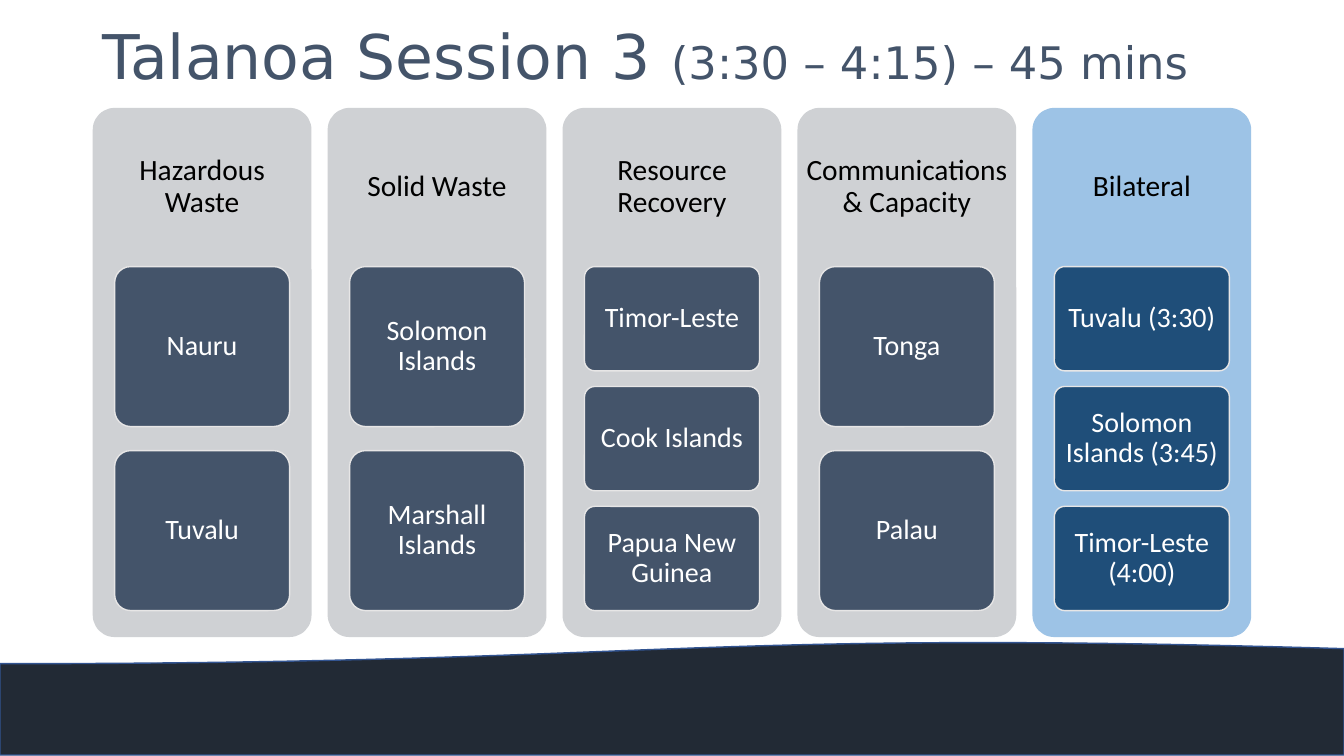
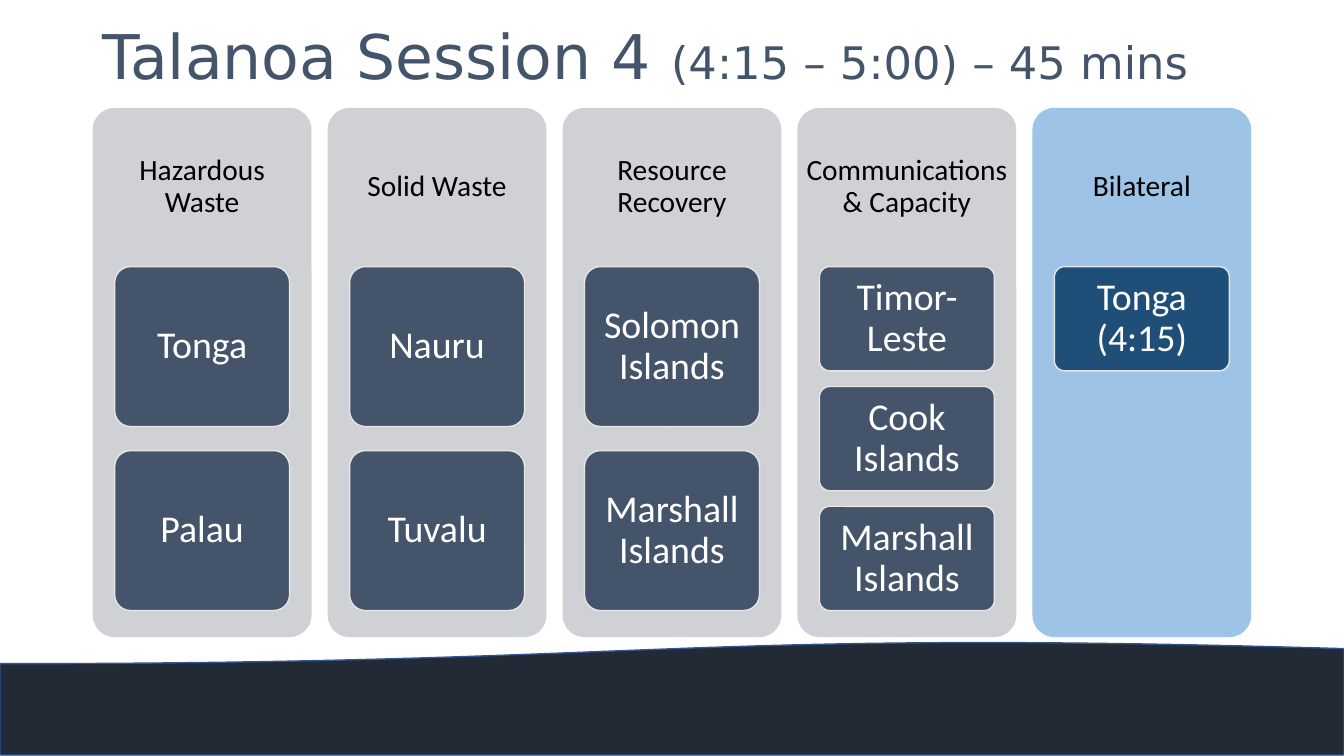
from pptx import Presentation
from pptx.dml.color import RGBColor
from pptx.enum.shapes import MSO_SHAPE as SHAPE
from pptx.enum.text import MSO_ANCHOR as ANCHOR, MSO_AUTO_SIZE as AUTO, PP_ALIGN as ALIGN
from pptx.util import Inches, Pt

SLATE = RGBColor(0x44, 0x54, 0x6A)
GREY = RGBColor(0xCF, 0xD1, 0xD4)
SKY = RGBColor(0x9D, 0xC3, 0xE6)
NAVY = RGBColor(0x1F, 0x4E, 0x79)
EDGE = RGBColor(0xE7, 0xE6, 0xE6)
BAND = RGBColor(0x22, 0x2A, 0x35)
BAND_EDGE = RGBColor(0x32, 0x54, 0x91)
BLACK = RGBColor(0, 0, 0)
WHITE = RGBColor(255, 255, 255)

TITLE_FONT, BODY_FONT = "DejaVu Sans", "Calibri"
TOPICS = ["Hazardous Waste", "Solid Waste", "Resource Recovery",
          "Communications & Capacity", "Bilateral"]
SESSIONS = [
    {
        "title": "Talanoa Session 3 ",
        "time": "(3:30 – 4:15) – 45 mins",
        "size": 20,
        "margins": (0.06, 0.04),
        "groups": [
            ["Nauru", "Tuvalu"],
            ["Solomon Islands", "Marshall Islands"],
            ["Timor-Leste", "Cook Islands", "Papua New Guinea"],
            ["Tonga", "Palau"],
            ["Tuvalu (3:30)", "Solomon Islands (3:45)", "Timor-Leste (4:00)"],
        ],
    },
    {
        "title": "Talanoa Session 4 ",
        "time": "(4:15 – 5:00) – 45 mins",
        "size": 27,
        "margins": (0.07, 0.06),
        "groups": [
            ["Tonga", "Palau"],
            ["Nauru", "Tuvalu"],
            ["Solomon Islands", "Marshall Islands"],
            ["Timor-Leste", "Cook Islands", "Marshall Islands"],
            ["Tonga (4:15)"],
        ],
    },
]

SLIDE_W, SLIDE_H = 13.33, 7.5
LEFT, TOP, COL_W, COL_H, PITCH = 0.92, 1.07, 2.17, 5.25, 2.33
HEADER_H, CARDS_H, CARD_W = 0.3 * COL_H, 0.65 * COL_H, 0.8 * COL_W
GAP_SHARE = 0.15


def inches(*lengths):
    return [Inches(n) for n in lengths]


def add_panel(s, kind, box, fill, line=None):
    sp = s.shapes.add_shape(kind, *inches(*box))
    sp.shadow.inherit = False
    sp.fill.solid()
    sp.fill.fore_color.rgb = fill
    if line is None:
        sp.line.fill.background()
    else:
        sp.line.color.rgb = line
        sp.line.width = Pt(1)
    if kind == SHAPE.ROUNDED_RECTANGLE:
        sp.adjustments[0] = 0.1
    return sp


def add_run(p, text, font, size, color):
    r = p.add_run()
    r.text = text
    r.font.name = font
    r.font.size = Pt(size)
    r.font.color.rgb = color


def write_label(sp, text, size, color, margins):
    tf = sp.text_frame
    tf.word_wrap = True
    tf.vertical_anchor = ANCHOR.MIDDLE
    tf.margin_left = tf.margin_right = Inches(margins[0])
    tf.margin_top = tf.margin_bottom = Inches(margins[1])
    p = tf.paragraphs[0]
    p.alignment = ALIGN.CENTER
    p.line_spacing = 0.9
    add_run(p, text, BODY_FONT, size, color)


def write_title(s, session):
    sp = s.shapes.title
    sp.left, sp.top, sp.width, sp.height = inches(LEFT, 0.11, 11.5, 0.97)
    tf = sp.text_frame
    tf.word_wrap = True
    tf.auto_size = AUTO.NONE
    tf.vertical_anchor = ANCHOR.MIDDLE
    p = tf.paragraphs[0]
    p.alignment = ALIGN.LEFT
    p.line_spacing = 0.9
    add_run(p, session["title"], TITLE_FONT, 44, SLATE)
    add_run(p, session["time"], TITLE_FONT, 32, SLATE)


def add_column(s, index, cards, session):
    bilateral = TOPICS[index] == "Bilateral"
    x = LEFT + index * PITCH
    add_panel(s, SHAPE.ROUNDED_RECTANGLE, (x, TOP, COL_W, COL_H), SKY if bilateral else GREY)
    header = s.shapes.add_textbox(*inches(x, TOP, COL_W, HEADER_H))
    write_label(header, TOPICS[index], 21, BLACK, (0.08, 0.09))

    rows = 3 if bilateral else len(cards)
    card_h = CARDS_H / (rows + (rows - 1) * GAP_SHARE)
    card_x = x + (COL_W - CARD_W) / 2
    for row, name in enumerate(cards):
        y = TOP + HEADER_H + row * card_h * (1 + GAP_SHARE)
        card = add_panel(s, SHAPE.ROUNDED_RECTANGLE, (card_x, y, CARD_W, card_h),
                         NAVY if bilateral else SLATE, EDGE)
        write_label(card, name, session["size"], WHITE, session["margins"])


def move_band_to_layout(s, layout):
    band = add_panel(s, SHAPE.FLOWCHART_DOCUMENT, (0, 6.36, SLIDE_W, 1.13), BAND, BAND_EDGE)
    band.rotation = 180
    layout.shapes.element.insert(2, band.element)


def main():
    prs = Presentation()
    prs.slide_width, prs.slide_height = inches(SLIDE_W, SLIDE_H)
    layout = prs.slide_layouts[5]
    for number, session in enumerate(SESSIONS):
        s = prs.slides.add_slide(layout)
        if number == 0:
            move_band_to_layout(s, layout)
        write_title(s, session)
        for index, cards in enumerate(session["groups"]):
            add_column(s, index, cards, session)
    prs.save("out.pptx")


if __name__ == "__main__":
    main()
